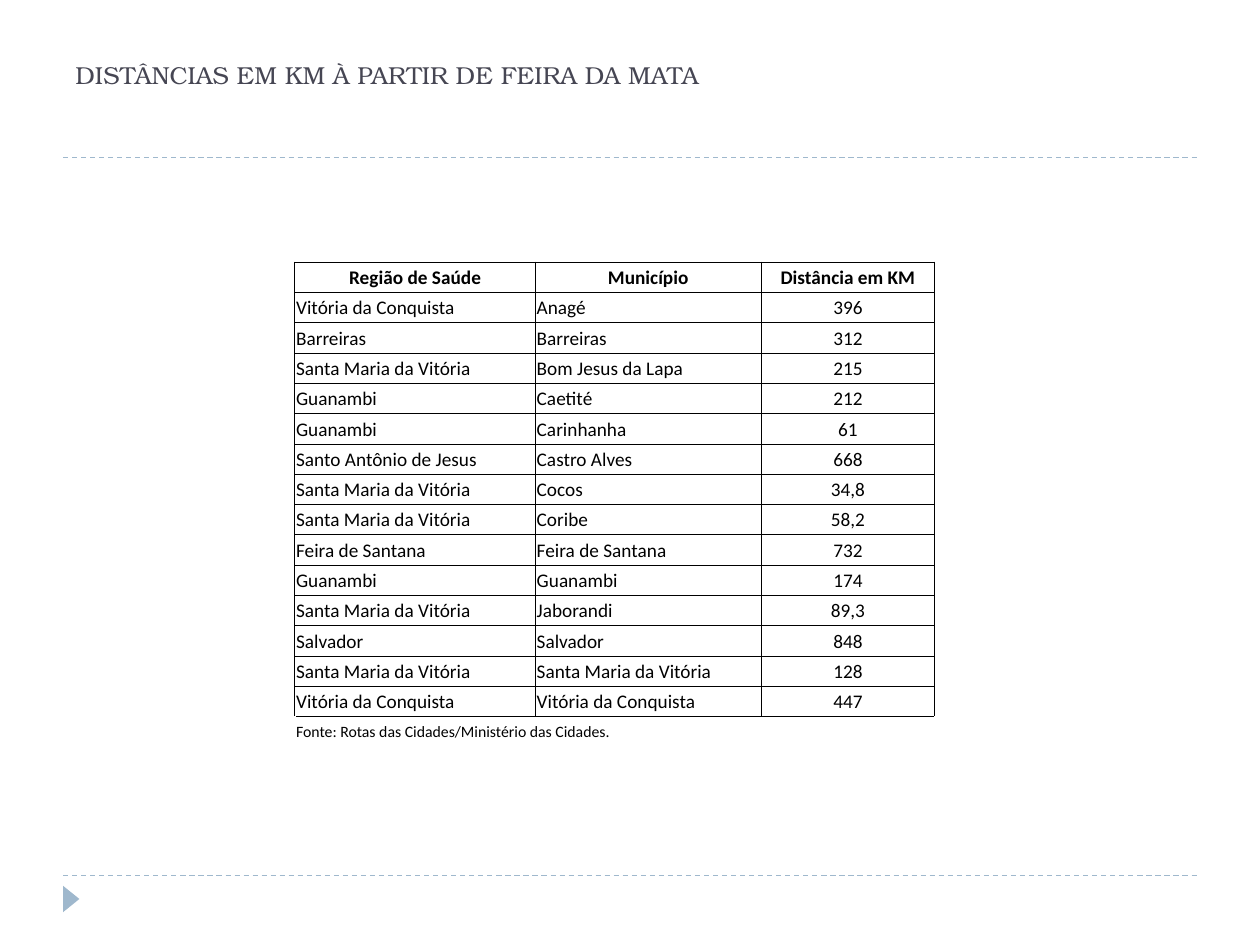
from typing import NamedTuple

from lxml import etree
from pptx import Presentation
from pptx.dml.color import RGBColor
from pptx.enum import dml, shapes, text
from pptx.oxml import ns
from pptx.util import Inches, Pt

COLORS = {"ink": "000000", "title": "464653", "accent": "9FB8CD"}
HEADS = ("Região de Saúde", "Município", "Distância em KM")
WIDTHS = (1.91, 1.79, 1.38)
SOURCE = "Fonte: Rotas das Cidades/Ministério das Cidades."


class Trip(NamedTuple):
    region: str
    city: str
    km: str


TRIPS = [
    Trip("Vitória da Conquista", "Anagé", "396"),
    Trip("Barreiras", "Barreiras", "312"),
    Trip("Santa Maria da Vitória", "Bom Jesus da Lapa", "215"),
    Trip("Guanambi", "Caetité", "212"),
    Trip("Guanambi", "Carinhanha", "61"),
    Trip("Santo Antônio de Jesus", "Castro Alves", "668"),
    Trip("Santa Maria da Vitória", "Cocos", "34,8"),
    Trip("Santa Maria da Vitória", "Coribe", "58,2"),
    Trip("Feira de Santana", "Feira de Santana", "732"),
    Trip("Guanambi", "Guanambi", "174"),
    Trip("Santa Maria da Vitória", "Jaborandi", "89,3"),
    Trip("Salvador", "Salvador", "848"),
    Trip("Santa Maria da Vitória", "Santa Maria da Vitória", "128"),
    Trip("Vitória da Conquista", "Vitória da Conquista", "447"),
]


def color(name: str) -> RGBColor:
    return RGBColor.from_string(COLORS[name])


def style(para, font: str, size: float, ink: str, bold: bool = False) -> None:
    for run in para.runs:
        run.font.name = font
        run.font.size = Pt(size)
        run.font.bold = bold
        run.font.color.rgb = color(ink)


def draw_rule(slide, top: float) -> None:
    y = Inches(top)
    rule = slide.shapes.add_connector(
        shapes.MSO_CONNECTOR.STRAIGHT, Inches(0.5), y, Inches(9.5), y)
    rule.line.color.rgb = color("accent")
    rule.line.width = Pt(0.75)
    rule.line.dash_style = dml.MSO_LINE.DASH
    etree.SubElement(rule._element.spPr, ns.qn("a:effectLst"))


def draw_mark(slide) -> None:
    mark = slide.shapes.add_shape(
        shapes.MSO_SHAPE.ISOSCELES_TRIANGLE,
        Inches(0.46), Inches(7.07), Inches(0.21), Inches(0.13))
    mark.rotation = 90
    mark.shadow.inherit = False
    mark.fill.solid()
    mark.fill.fore_color.rgb = color("accent")
    mark.line.fill.background()


def draw_title(slide, words: str) -> None:
    box = slide.shapes.add_textbox(
        Inches(0.5), Inches(0.17), Inches(9), Inches(1.08))
    frame = box.text_frame
    frame.word_wrap = True
    frame.vertical_anchor = text.MSO_ANCHOR.MIDDLE
    frame.margin_bottom = Inches(0.28)
    frame.text = words
    style(frame.paragraphs[0], "TeX Gyre Bonum", 14, "title")


def add_border(cell, sides: str) -> None:
    props = cell._tc.get_or_add_tcPr()
    for side in sides:
        line = etree.SubElement(props, ns.qn(f"a:ln{side}"), w=str(Pt(0.5)))
        fill = etree.SubElement(line, ns.qn("a:solidFill"))
        etree.SubElement(fill, ns.qn("a:srgbClr"), val=COLORS["ink"])


def fill_cell(cell, words: str, sides: str, center: bool = False,
              bold: bool = False, size: float = 11) -> None:
    cell.margin_left = cell.margin_right = cell.margin_top = Inches(0.01)
    cell.margin_bottom = 0
    cell.vertical_anchor = text.MSO_ANCHOR.MIDDLE
    add_border(cell, sides)
    cell.fill.background()
    cell.text = words
    para = cell.text_frame.paragraphs[0]
    para.alignment = text.PP_ALIGN.CENTER if center else text.PP_ALIGN.LEFT
    style(para, "Calibri", size, "ink", bold)


def draw_table(slide) -> None:
    rows = [HEADS, *TRIPS]
    count = len(rows) + 1
    high = Inches(3.85)
    table = slide.shapes.add_table(
        count, len(HEADS), Inches(2.34), Inches(2.08),
        Inches(sum(WIDTHS)), high).table
    table.first_row = table.horz_banding = False
    for col, width in zip(table.columns, WIDTHS):
        col.width = Inches(width)
    for row in table.rows:
        row.height = high // count

    # Heading and distances
    for r, row in enumerate(rows):
        for c, words in enumerate(row):
            head = r == 0
            fill_cell(table.cell(r, c), words, "LRTB", head or c == 2, head)

    # Source row across all columns
    last = count - 1
    table.cell(last, 0).merge(table.cell(last, len(HEADS) - 1))
    for c in range(len(HEADS)):
        fill_cell(table.cell(last, c), "" if c else SOURCE, "T", size=9)


def main() -> None:
    deck = Presentation()
    deck.slide_width, deck.slide_height = Inches(10), Inches(7.5)
    slide = deck.slides.add_slide(deck.slide_layouts[6])

    # Frame of the page
    for top in (6.95, 1.25):
        draw_rule(slide, top)
    draw_mark(slide)

    # Content
    draw_title(slide, "DISTÂNCIAS EM KM À PARTIR DE FEIRA DA MATA")
    draw_table(slide)
    deck.save("out.pptx")


if __name__ == "__main__":
    main()
